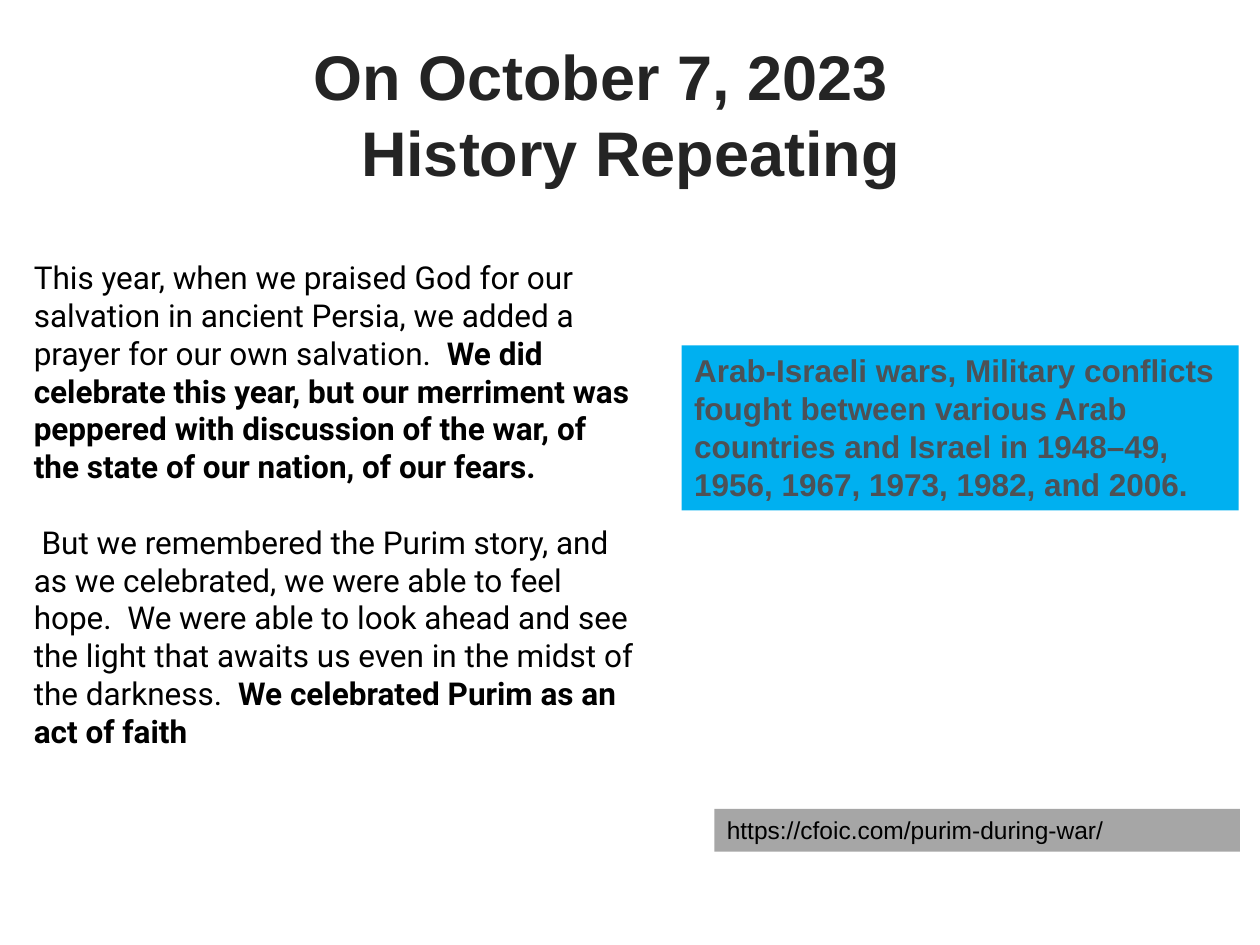
import pptx
import pptx.util
import pptx.dml.color
import pptx.enum.shapes
import pptx.enum.text

Inches = pptx.util.Inches
Pt = pptx.util.Pt
ALIGN = pptx.enum.text.PP_ALIGN

COLORS = {
    "title": "242424",
    "body": "000000",
    "fact": "4D5156",
    "blue": "00B0F0",
    "gray": "A6A6A6",
}


def paint(name):
    return pptx.dml.color.RGBColor.from_string(COLORS[name])


def write(para, text, size=18, font="Arial", color="body", bold=False):
    run = para.add_run()
    run.text = text
    run.font.size = Pt(size)
    run.font.name = font
    run.font.bold = bold
    run.font.color.rgb = paint(color)


def make_box(slide, box, fill=None):
    spot = [Inches(side) for side in box]
    if fill:
        kind = pptx.enum.shapes.MSO_SHAPE.RECTANGLE
        shape = slide.shapes.add_shape(kind, *spot)
        shape.shadow.inherit = False
        shape.fill.solid()
        shape.fill.fore_color.rgb = paint(fill)
        shape.line.fill.background()
    else:
        shape = slide.shapes.add_textbox(*spot)
    frame = shape.text_frame
    frame.word_wrap = True
    frame.vertical_anchor = pptx.enum.text.MSO_ANCHOR.TOP
    frame.paragraphs[0].alignment = ALIGN.LEFT
    return frame


def add_title(slide, box):
    frame = make_box(slide, box)
    style = {"size": 36, "color": "title", "bold": True}
    write(frame.paragraphs[0], "On October 7, 2023", **style)
    para = frame.add_paragraph()
    para.alignment = ALIGN.CENTER
    write(para, "History Repeating", **style)


def add_story(slide, box):
    frame = make_box(slide, box)
    parts = [
        (
            "This year, when we praised God for our salvation in ancient Persia, "
            "we added a prayer for our own salvation.  ",
            "We did celebrate this year, but our merriment was peppered with "
            "discussion of the war, of the state of our nation, of our fears.",
        ),
        (
            " But we remembered the Purim story, and as we celebrated, we were "
            "able to feel hope.  We were able to look ahead and see the light "
            "that awaits us even in the midst of the darkness.  ",
            "We celebrated Purim as an act of faith",
        ),
    ]
    for index, (plain, strong) in enumerate(parts):
        para = frame.add_paragraph() if index else frame.paragraphs[0]
        if index:
            para.space_before = Pt(21.6)
        write(para, plain, font="Roboto")
        write(para, strong, font="Roboto", bold=True)


def add_panel(slide, box, text, fill, **style):
    frame = make_box(slide, box, fill)
    write(frame.paragraphs[0], text, **style)


def main():
    deck = pptx.Presentation()
    deck.slide_width = Inches(10)
    deck.slide_height = Inches(7.5)
    slide = deck.slides.add_slide(deck.slide_layouts[6])
    add_title(slide, (2.39, 0.25, 5.23, 1.31))
    add_panel(slide, (5.67, 6.42, 4.17, 0.34),
              "https://cfoic.com/purim-during-war/", "gray", size=14)
    add_story(slide, (0.17, 2, 5, 4.04))
    add_panel(slide, (5.41, 2.74, 4.42, 1.31),
              "Arab-Israeli wars, Military conflicts fought between various "
              "Arab countries and Israel in 1948–49, 1956, 1967, 1973, 1982, "
              "and 2006.", "blue", color="fact", bold=True)
    deck.save("out.pptx")


if __name__ == "__main__":
    main()
